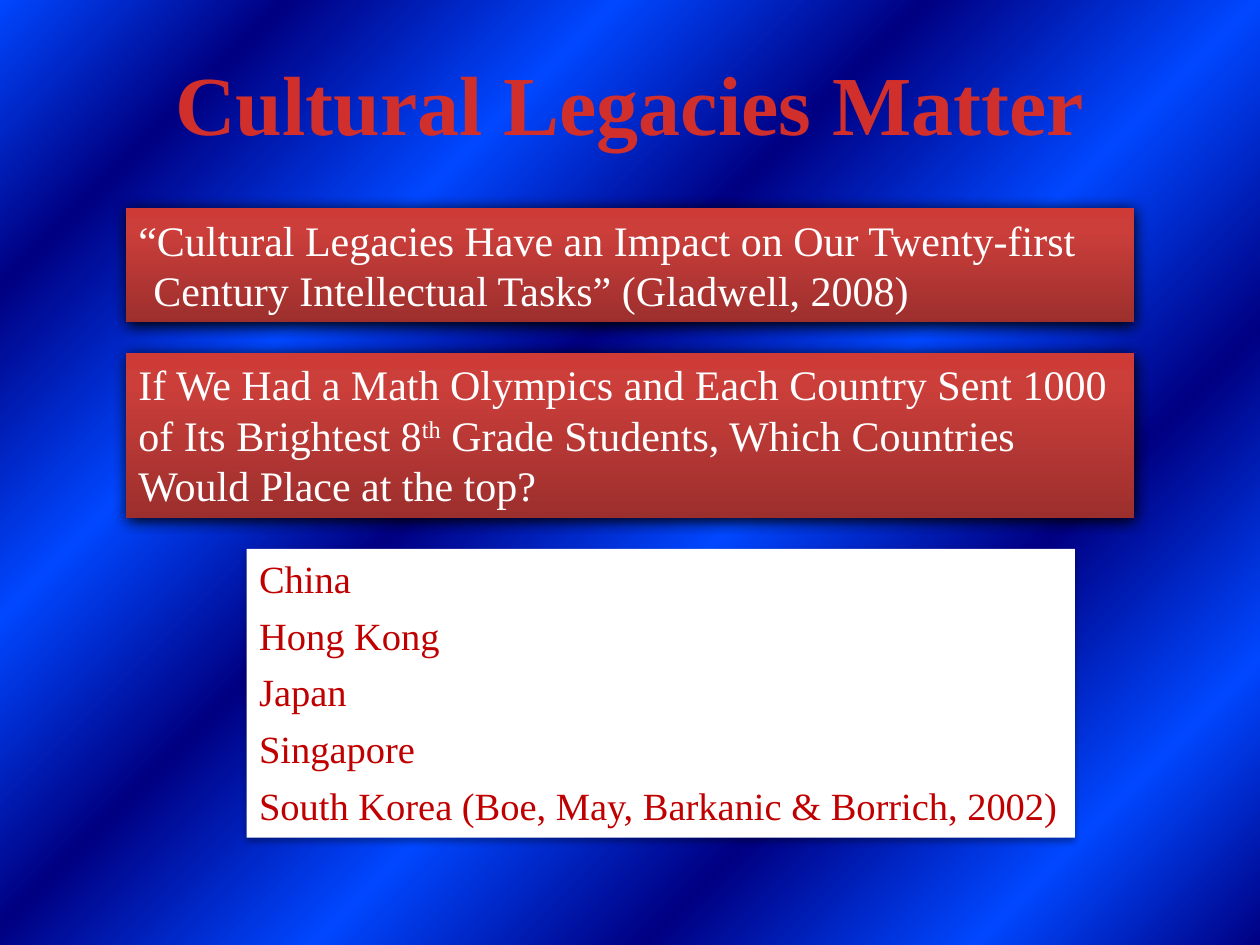
from pptx import Presentation
from pptx.dml.color import RGBColor
from pptx.enum.shapes import MSO_SHAPE
from pptx.enum.text import MSO_ANCHOR, MSO_AUTO_SIZE, PP_ALIGN
from pptx.oxml import parse_xml
from pptx.oxml.ns import nsdecls, qn
from pptx.util import Pt

FONT = "Times New Roman"
NAVY = RGBColor(0x00, 0x00, 0x82)
BLUE = RGBColor(0x00, 0x47, 0xFF)
TITLE_RED = RGBColor(0xD0, 0x2F, 0x2C)
DARK_RED = RGBColor(0x9C, 0x2F, 0x2D)
MID_RED = RGBColor(0xCB, 0x3E, 0x3A)
LIGHT_RED = RGBColor(0xCE, 0x3B, 0x37)
LIST_RED = RGBColor(0xC0, 0x00, 0x00)
WHITE = RGBColor(0xFF, 0xFF, 0xFF)

STRIPES = [(position, BLUE if index % 2 else NAVY)
           for index, position in enumerate((0, 13, 28, 43, 58, 72, 87, 100))]
RED_FADE = [(0, DARK_RED), (80, MID_RED), (100, LIGHT_RED)]


def set_gradient(fill, element, stops, angle):
    """Fill with any number of stops; the angle runs counter-clockwise."""
    fill.gradient()
    fill.gradient_angle = angle
    stop_list = element.find(".//" + qn("a:gsLst"))
    for stop in list(stop_list):
        stop_list.remove(stop)
    for position, color in stops:
        stop_list.append(parse_xml(
            f'<a:gs {nsdecls("a")} pos="{position * 1000}">'
            f'<a:srgbClr val="{color}"/></a:gs>'))


def add_panel(left, top, width, height, paragraphs, size, color, shadow):
    """Add a borderless rectangle with text and a shadow falling downwards."""
    panel = slide.shapes.add_shape(
        MSO_SHAPE.RECTANGLE, Pt(left), Pt(top), Pt(width), Pt(height))
    panel.line.fill.background()
    panel.shadow.inherit = False
    opacity, blur, distance = shadow
    panel._element.spPr.find(qn("a:effectLst")).append(parse_xml(
        f'<a:outerShdw {nsdecls("a")} blurRad="{Pt(blur)}" dist="{Pt(distance)}" '
        f'dir="5400000" algn="ctr" rotWithShape="0"><a:srgbClr val="000000">'
        f'<a:alpha val="{opacity * 1000}"/></a:srgbClr></a:outerShdw>'))
    frame = panel.text_frame
    frame.word_wrap = True
    frame.vertical_anchor = MSO_ANCHOR.TOP
    for index, spans in enumerate(paragraphs):
        para = frame.paragraphs[0] if index == 0 else frame.add_paragraph()
        para.alignment = PP_ALIGN.LEFT
        for text in spans:
            span = para.add_run()
            span.text = text
            span.font.name = FONT
            span.font.size = Pt(size)
            span.font.color.rgb = color
    return panel


deck = Presentation()
deck.slide_width, deck.slide_height = Pt(720), Pt(540)
slide = deck.slides.add_slide(deck.slide_layouts[5])

# Striped background
set_gradient(slide.background.fill, slide._element, STRIPES, 135)

# Title
title = slide.shapes.title
title.left, title.top, title.width, title.height = Pt(90.5), Pt(26), Pt(539), Pt(65.5)
frame = title.text_frame
frame.text = "Cultural Legacies Matter"
frame.word_wrap = False
frame.auto_size = MSO_AUTO_SIZE.NONE
frame.vertical_anchor = MSO_ANCHOR.TOP
para = frame.paragraphs[0]
para.alignment = PP_ALIGN.CENTER
font = para.runs[0].font
font.name, font.size, font.bold = FONT, Pt(48), True
font.color.rgb = TITLE_RED

# Red panels: quotation and question
quotation = ["“Cultural Legacies Have an Impact on Our Twenty-first Century "
             "Intellectual Tasks” (Gladwell, 2008)"]
question = ["If We Had a Math Olympics and Each Country Sent 1000 of Its Brightest 8",
            "th", " Grade Students, Which Countries Would Place at the top?"]
red_panels = [add_panel(72, top, 576, height, [spans], 24, WHITE, (100, 8.5, 1))
              for top, height, spans in ((118.8, 65.5, quotation),
                                         (201.6, 94.5, question))]
for panel in red_panels:
    set_gradient(panel.fill, panel._element.spPr, RED_FADE, 90)

# Hanging quotation mark and raised ordinal
quotation_panel, question_panel = red_panels
properties = quotation_panel.text_frame.paragraphs[0]._p.get_or_add_pPr()
properties.set("marL", str(Pt(8.64)))
properties.set("indent", str(Pt(-8.64)))
ordinal = question_panel.text_frame.paragraphs[0].runs[1]
ordinal.font._element.set("baseline", "30000")

# White panel: countries
countries = ["China", "Hong Kong", "Japan", "Singapore",
             "South Korea (Boe, May, Barkanic & Borrich, 2002)"]
answer = add_panel(141, 313.6, 473.2, 165, [[country] for country in countries],
                   22, LIST_RED, (32, 3.5, 2.2))
answer.fill.solid()
answer.fill.fore_color.rgb = WHITE
for para in answer.text_frame.paragraphs:
    para.space_after = Pt(6)

deck.save("out.pptx")
